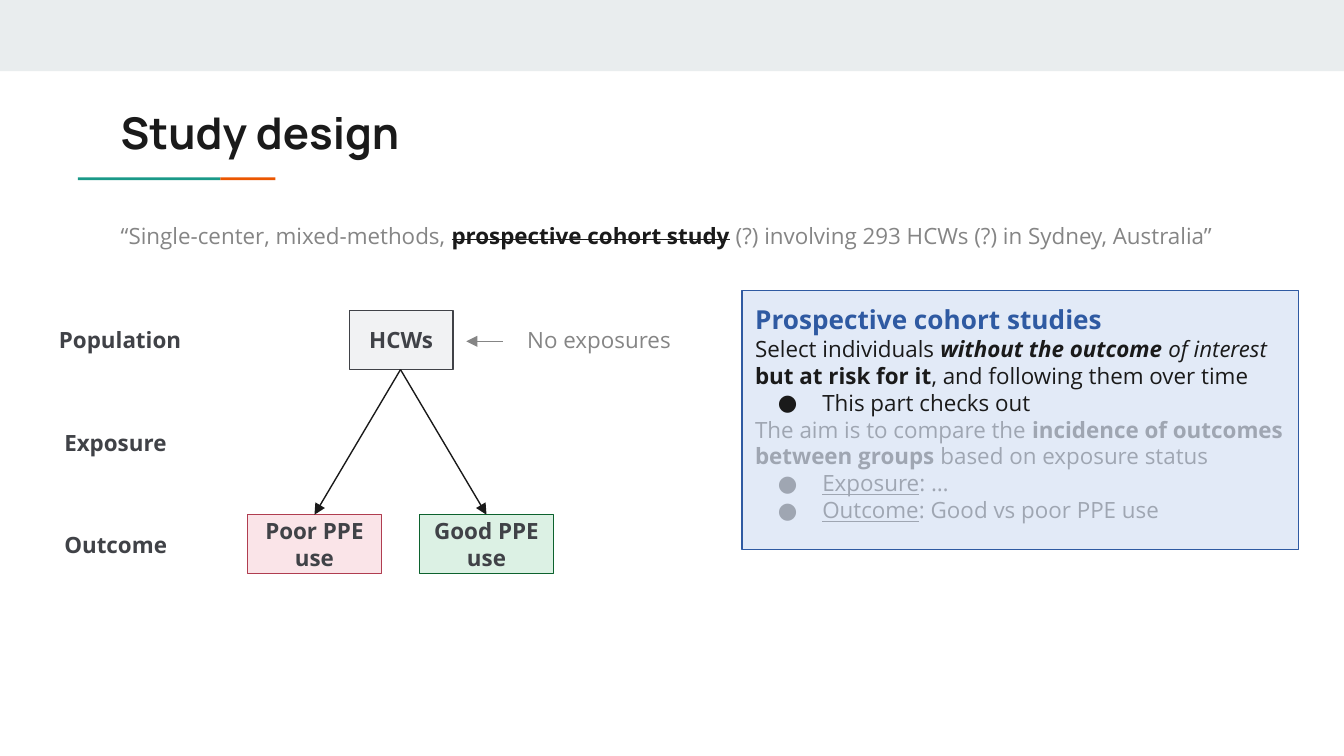
import pptx
import pptx.util
import pptx.dml.color
import pptx.enum.shapes
import pptx.enum.text
import pptx.oxml
import pptx.oxml.ns
from pptx.util import Inches

COLORS = {
    "band": "E9EDEE", "teal": "1A9988", "orange": "EB5600",
    "ink": "1A1A1A", "slate": "404247", "gray": "858585", "faded": "9FA6B2",
    "neutral": "F1F2F3", "poor": "FAE4E8", "poor_edge": "B03D50",
    "good": "DCF1E4", "good_edge": "0C622E",
    "panel": "E2EAF7", "panel_edge": "2F5AA2",
}
ALIGN = pptx.enum.text.PP_ALIGN
ANCHOR = pptx.enum.text.MSO_ANCHOR
RECTANGLE = pptx.enum.shapes.MSO_SHAPE.RECTANGLE
STRAIGHT = pptx.enum.shapes.MSO_CONNECTOR.STRAIGHT


def rgb(name):
    return pptx.dml.color.RGBColor.from_string(COLORS[name])


class SlideBuilder:
    font = "Open Sans"
    size = 12
    line_width = 0.75
    inset = 0.1

    def __init__(self, slide):
        self.slide = slide

    def add_run(self, paragraph, text, color="ink", marks="", size=None, font=None):
        """Add one run; marks holds b, i, u or s for bold, italic, underline, strike."""
        run = paragraph.add_run()
        run.text = text
        run.font.name = font or self.font
        run.font.size = pptx.util.Pt(size or self.size)
        run.font.color.rgb = rgb(color)
        run.font.bold = "b" in marks
        run.font.italic = "i" in marks
        run.font.underline = "u" in marks
        if "s" in marks:
            run.font._element.set("strike", "sngStrike")

    def add_bullet(self, paragraph, color):
        properties = paragraph._p.get_or_add_pPr()
        properties.set("marL", str(Inches(0.5)))
        properties.set("indent", str(Inches(-0.33)))
        namespace = pptx.oxml.ns.nsdecls("a")
        for xml in (
            f'<a:buClr {namespace}><a:srgbClr val="{COLORS[color]}"/></a:buClr>',
            f'<a:buSzPts {namespace} val="{self.size * 100}"/>',
            f'<a:buFont {namespace} typeface="{self.font}"/>',
            f'<a:buChar {namespace} char="●"/>',
        ):
            properties.append(pptx.oxml.parse_xml(xml))

    def fill_text(self, shape, paragraphs, align=ALIGN.LEFT, anchor=ANCHOR.MIDDLE):
        """Write paragraphs given as (bullet colour or None, list of run arguments)."""
        frame = shape.text_frame
        frame.word_wrap = True
        frame.vertical_anchor = anchor
        frame.margin_left = frame.margin_right = Inches(self.inset)
        frame.margin_top = frame.margin_bottom = Inches(self.inset)
        for index, (bullet, runs) in enumerate(paragraphs):
            paragraph = frame.add_paragraph() if index else frame.paragraphs[0]
            paragraph.alignment = align
            if bullet:
                self.add_bullet(paragraph, bullet)
            for run in runs:
                self.add_run(paragraph, *run)
        return frame

    def text(self, box, runs, **layout):
        shape = self.slide.shapes.add_textbox(*map(Inches, box))
        return self.fill_text(shape, [(None, runs)], **layout)

    def rectangle(self, box, fill, edge=None):
        shape = self.slide.shapes.add_shape(RECTANGLE, *map(Inches, box))
        shape.shadow.inherit = False
        shape.fill.solid()
        shape.fill.fore_color.rgb = rgb(fill)
        if edge:
            shape.line.color.rgb = rgb(edge)
            shape.line.width = pptx.util.Pt(self.line_width)
        else:
            shape.line.fill.background()
        return shape

    def node(self, box, label, fill, edge):
        shape = self.rectangle(box, fill, edge)
        self.fill_text(shape, [(None, [(label, "slate", "b")])], align=ALIGN.CENTER)

    def arrow(self, start, end, color):
        connector = self.slide.shapes.add_connector(STRAIGHT, *map(Inches, start + end))
        connector.line.color.rgb = rgb(color)
        connector.line.width = pptx.util.Pt(self.line_width)
        namespace = pptx.oxml.ns.nsdecls("a")
        connector.line._get_or_add_ln().append(
            pptx.oxml.parse_xml(f'<a:tailEnd {namespace} type="triangle"/>'))
        connector._element.spPr.append(pptx.oxml.parse_xml(f"<a:effectLst {namespace}/>"))


def main():
    deck = pptx.Presentation()
    deck.slide_width, deck.slide_height = Inches(10), Inches(10 * 9 / 16)
    builder = SlideBuilder(deck.slides.add_slide(deck.slide_layouts[6]))

    builder.rectangle((0, 0, 10, 0.53), "band")
    builder.rectangle((0.58, 1.32, 1.06, 0.02), "teal")
    builder.rectangle((1.64, 1.32, 0.41, 0.02), "orange")

    builder.text((0.8, 0.69, 8.41, 0.59),
                 [("Study design", "ink", "b", 23.4, "Manrope")], anchor=ANCHOR.TOP)
    quote = builder.text((0.8, 1.52, 8.41, 0.44), [
        ("“Single-center, mixed-methods, ", "gray"),
        ("prospective cohort study", "ink", "bs"),
        (" (?) involving 293 HCWs (?) in Sydney, Australia”", "gray"),
    ], anchor=ANCHOR.TOP)
    quote.paragraphs[0].line_spacing = 1.15
    quote.paragraphs[0].space_after = pptx.util.Pt(12)

    # Flow from the population down to the two outcomes
    row_height = 0.44
    population_top, exposure_top, outcome_top = 2.31, 3.07, 3.83
    center, spread, outcome_width = 2.98, 0.64, 1
    builder.node((2.6, population_top, 0.77, row_height), "HCWs", "neutral", "slate")
    outcomes = [("Poor PPE use", "poor", -spread), ("Good PPE use", "good", spread)]
    for label, fill, offset in outcomes:
        middle = center + offset
        builder.node((middle - outcome_width / 2, outcome_top, outcome_width, row_height),
                     label, fill, fill + "_edge")
        builder.arrow((center, population_top + row_height), (middle, outcome_top), "ink")

    builder.text((3.8, population_top, 1.29, row_height),
                 [("No exposures", "gray")], align=ALIGN.RIGHT)
    builder.arrow((3.74, 2.54), (3.47, 2.54), "gray")

    for label, left, top in [("Population", 0.34, population_top),
                             ("Exposure", 0.38, exposure_top),
                             ("Outcome", 0.38, outcome_top)]:
        builder.text((left, top, 1.19, row_height), [(label, "slate", "b")])

    definition = builder.rectangle((5.52, 2.16, 4.14, 1.93), "panel", "panel_edge")
    builder.fill_text(definition, [
        (None, [("Prospective cohort studies", "panel_edge", "b", 14)]),
        (None, [("Select individuals ",), ("without the outcome", "ink", "bi"),
                (" of interest ", "ink", "i"), ("but at risk for it", "ink", "b"),
                (", and following them over time",)]),
        ("ink", [("This part checks out",)]),
        (None, [("The aim is to compare the ", "faded"),
                ("incidence of outcomes between groups", "faded", "b"),
                (" based on exposure status", "faded")]),
        ("faded", [("Exposure", "faded", "u"), (": …", "faded")]),
        ("faded", [("Outcome", "faded", "u"), (": Good vs poor PPE use", "faded")]),
    ], anchor=ANCHOR.TOP)

    deck.save("out.pptx")


if __name__ == "__main__":
    main()
